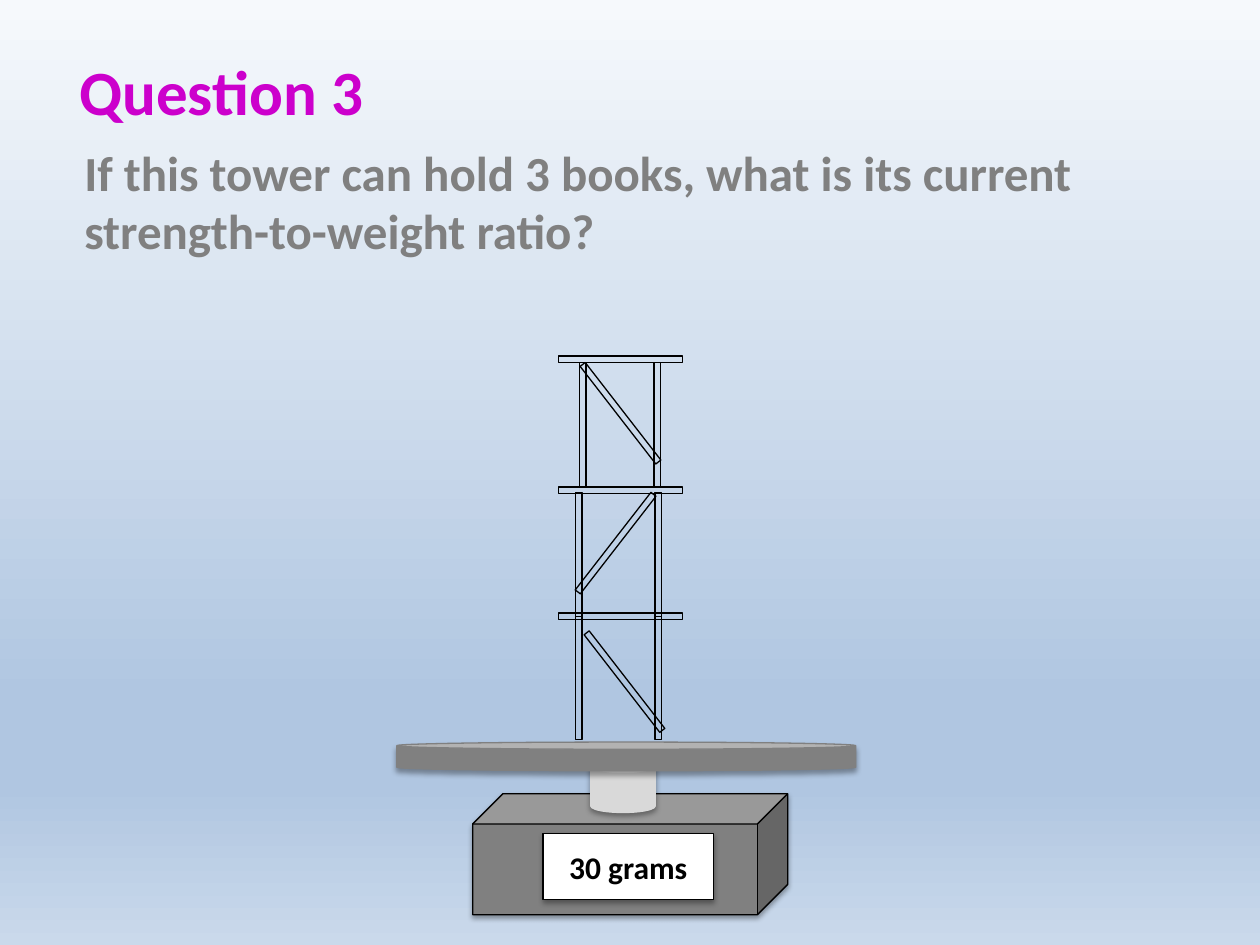
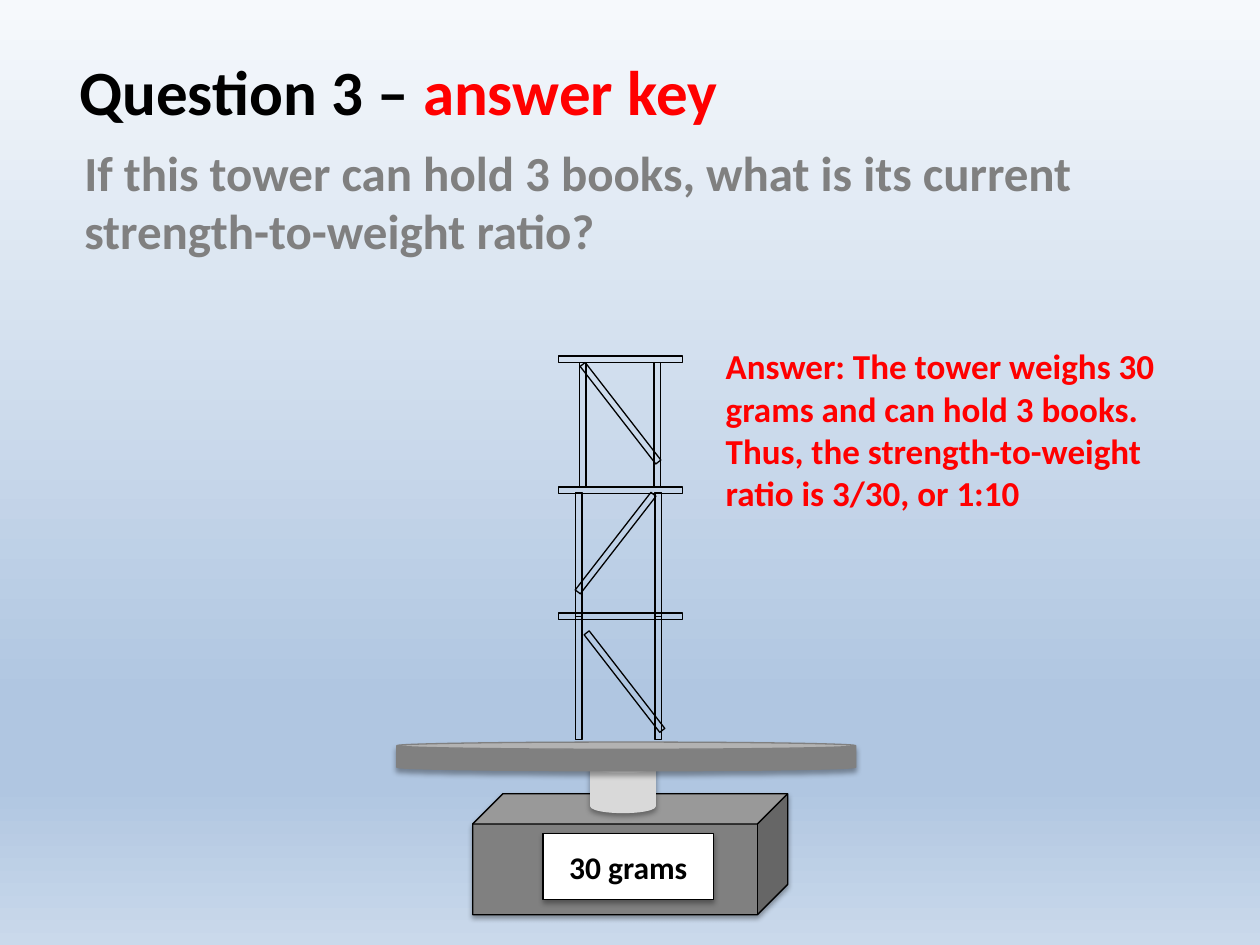
from lxml.etree import SubElement
from pptx import Presentation
from pptx.dml.color import RGBColor
from pptx.enum.shapes import MSO_SHAPE as Shape
from pptx.enum.text import MSO_ANCHOR as Anchor, MSO_AUTO_SIZE as AutoSize, PP_ALIGN as Align
from pptx.oxml.ns import qn
from pptx.util import Cm, Pt

COLORS = {
    "magenta": "CC00CC",
    "red": "FF0000",
    "black": "000000",
    "white": "FFFFFF",
    "gray": "808080",
    "light_gray": "D9D9D9",
}
SKY_STOPS = [(0, "F6F9FC"), (74, "B0C6E1"), (83, "B0C6E1"), (100, "CAD9EB")]
FONT = "Calibri"
QUESTION = "If this tower can hold 3 books, what is its current strength-to-weight ratio?"
ANSWER = ("Answer: The tower weighs 30 grams and can hold 3 books. "
          "Thus, the strength-to-weight ratio is 3/30, or 1:10")

STICK_LENGTH, STICK_WIDTH = 2.49, 0.13
TOWER_CENTER = 12.51
BRACE_TILT = 37.8
UPRIGHTS = [(8.56, (11.75, 13.25)), (11.18, (11.67, 13.27)), (13.67, (11.67, 13.27))]
BEAM_LEVELS = [7.24, 9.88, 12.42]
BRACES = [(12.51, 8.33, -BRACE_TILT), (12.41, 10.95, BRACE_TILT), (12.59, 13.74, -BRACE_TILT)]


def rgb(color):
    return RGBColor.from_string(COLORS[color])


def paint_sky(slide):
    fill = slide.background.fill
    fill.gradient()
    fill.gradient_angle = 270
    stops = slide.element.find(".//" + qn("a:gsLst"))
    for old_stop in list(stops):
        stops.remove(old_stop)
    for percent, color in SKY_STOPS:
        stop = SubElement(stops, qn("a:gs"), pos=str(percent * 1000))
        SubElement(stop, qn("a:srgbClr"), val=color)


def style_run(run, size, color):
    run.font.name = FONT
    run.font.size = Pt(size)
    run.font.bold = True
    run.font.color.rgb = rgb(color)


def add_text(slide, place, size, *pieces):
    box = slide.shapes.add_textbox(*map(Cm, place))
    frame = box.text_frame
    frame.word_wrap = True
    frame.auto_size = AutoSize.SHAPE_TO_FIT_TEXT
    for words, color in pieces:
        run = frame.paragraphs[0].add_run()
        run.text = words
        style_run(run, size, color)


def add_outlined(group, kind, place):
    part = group.shapes.add_shape(kind, *map(Cm, place))
    part.shadow.inherit = False
    part.fill.background()
    part.line.color.rgb = rgb("black")
    part.line.width = Pt(0.75)
    return part


def add_scale_part(group, kind, place, fill, line):
    part = add_outlined(group, kind, place)
    part.fill.solid()
    part.fill.fore_color.rgb = rgb(fill)
    part.line.color.rgb = rgb(line)
    effects = part.element.spPr.find(qn("a:effectLst"))
    shadow = SubElement(effects, qn("a:outerShdw"), blurRad=str(Pt(3.1)),
                        dist=str(Pt(1.8)), dir="5400000", rotWithShape="0")
    tint = SubElement(shadow, qn("a:srgbClr"), val=COLORS["black"])
    SubElement(tint, qn("a:alpha"), val="35000")
    return part


def add_scale(slide):
    scale = slide.shapes.add_group_shape()
    add_scale_part(scale, Shape.CUBE, (9.53, 16, 6.35, 2.44), "gray", "black")
    add_scale_part(scale, Shape.CAN, (11.91, 15.34, 1.3, 1.04), "light_gray", "light_gray")
    add_scale_part(scale, Shape.CAN, (8, 14.96, 9.25, 0.58), "gray", "gray")
    display = add_scale_part(scale, Shape.RECTANGLE, (10.95, 16.81, 3.43, 1.32), "white", "black")
    frame = display.text_frame
    frame.text = "30 grams"
    frame.vertical_anchor = Anchor.MIDDLE
    reading = frame.paragraphs[0]
    reading.alignment = Align.CENTER
    style_run(reading.runs[0], 18, "black")


def add_stick(tower, x, y, rotation=0):
    place = (x - STICK_WIDTH / 2, y - STICK_LENGTH / 2, STICK_WIDTH, STICK_LENGTH)
    add_outlined(tower, Shape.RECTANGLE, place).rotation = rotation


def add_tower(slide):
    tower = slide.shapes.add_group_shape()
    for y, columns in UPRIGHTS:
        for x in columns:
            add_stick(tower, x, y)
    for y in BEAM_LEVELS:
        add_stick(tower, TOWER_CENTER, y, 270)
    for x, y, tilt in BRACES:
        add_stick(tower, x, y, tilt)


def add_question_slide(deck, title_width, *title_pieces):
    slide = deck.slides.add_slide(deck.slide_layouts[6])
    paint_sky(slide)
    add_text(slide, (1.35, 0.94, title_width, 1.8), 36, *title_pieces)
    add_text(slide, (1.45, 2.74, 22.35, 2.64), 28, (QUESTION, "gray"))
    add_scale(slide)
    add_tower(slide)
    return slide


def main():
    deck = Presentation()
    deck.slide_width, deck.slide_height = Cm(25.4), Cm(19.05)
    add_question_slide(deck, 14.17, ("Question 3", "magenta"))
    answer_slide = add_question_slide(
        deck, 16.56, ("Question 3 – ", "black"), ("answer key", "red"))
    add_text(answer_slide, (14.38, 6.83, 9.32, 3.68), 20, (ANSWER, "red"))
    deck.save("out.pptx")


if __name__ == "__main__":
    main()
